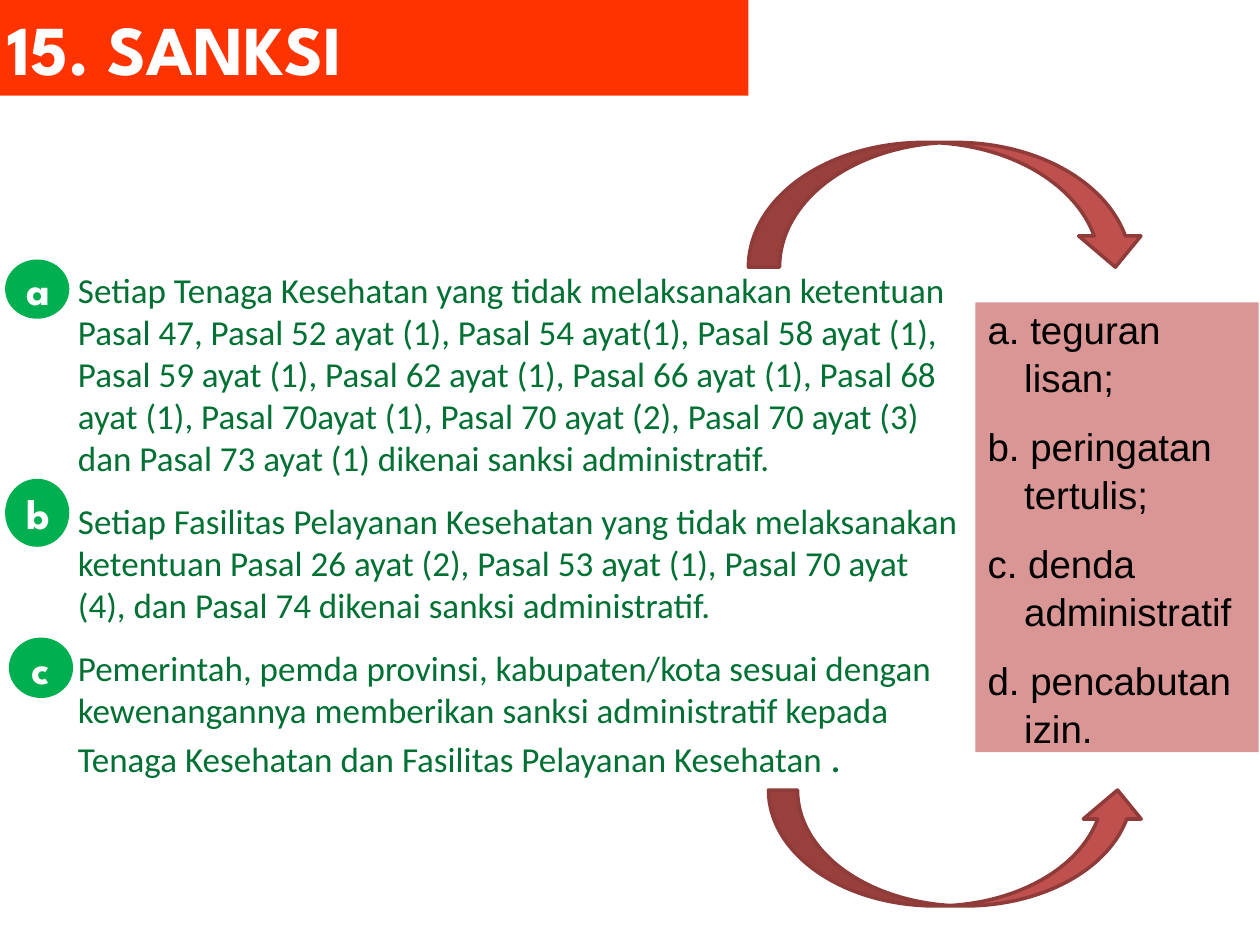
import pptx
import pptx.dml.color
import pptx.enum.shapes
import pptx.enum.text
import pptx.util

Inches = pptx.util.Inches
Pt = pptx.util.Pt
RGBColor = pptx.dml.color.RGBColor
Shape = pptx.enum.shapes.MSO_SHAPE
Align = pptx.enum.text.PP_ALIGN
Anchor = pptx.enum.text.MSO_ANCHOR

ORANGE = RGBColor(0xFF, 0x33, 0x00)
GREEN = RGBColor(0x00, 0xB0, 0x50)
DARK_GREEN = RGBColor(0x00, 0x70, 0x33)
PINK = RGBColor(0xD9, 0x96, 0x94)
RED = RGBColor(0xC0, 0x50, 0x4D)
DARK_RED = RGBColor(0x8E, 0x3B, 0x39)
WHITE = RGBColor(0xFF, 0xFF, 0xFF)
BLACK = RGBColor(0x00, 0x00, 0x00)

HEADING_FONT = "League Spartan"

ARTICLES = [
    [("Setiap Tenaga Kesehatan yang tidak melaksanakan ketentuan Pasal 47, "
      "Pasal 52 ayat (1), Pasal 54 ayat(1), Pasal 58 ayat (1), Pasal 59 ayat (1), "
      "Pasal 62 ayat (1), Pasal 66 ayat (1), Pasal 68 ayat (1), Pasal 70ayat (1), "
      "Pasal 70 ayat (2), Pasal 70 ayat (3) dan Pasal 73 ayat (1) dikenai sanksi "
      "administratif.", 20)],
    [("Setiap Fasilitas Pelayanan Kesehatan yang tidak melaksanakan ketentuan "
      "Pasal 26 ayat (2), Pasal 53 ayat (1), Pasal 70 ayat (4), dan Pasal 74 "
      "dikenai sanksi administratif.", 20)],
    [("Pemerintah, pemda provinsi, kabupaten/kota sesuai dengan kewenangannya "
      "memberikan sanksi administratif kepada Tenaga Kesehatan dan Fasilitas "
      "Pelayanan Kesehatan ", 20), (".", 24)],
]
SANCTIONS = ["a. teguran lisan;", "b. peringatan tertulis;",
             "c. denda administratif", "d. pencabutan izin."]
BADGES = [("a", 0.04, 2.06, 0.47), ("b", 0.04, 3.8, 0.54), ("c", 0.07, 5.06, 0.48)]
ARROWS = [(Shape.CURVED_DOWN_ARROW, 5.94, 1.13, 3.16, 0.99),
          (Shape.CURVED_UP_ARROW, 6.1, 6.27, 3, 0.92)]


def add_run(paragraph, text, size, font, color, bold=False):
    run = paragraph.add_run()
    run.text = text
    run.font.size = Pt(size)
    run.font.name = font
    run.font.color.rgb = color
    run.font.bold = bold


def add_filled_shape(slide, kind, left, top, width, height, fill):
    shape = slide.shapes.add_shape(
        kind, Inches(left), Inches(top), Inches(width), Inches(height))
    shape.shadow.inherit = False
    shape.fill.solid()
    shape.fill.fore_color.rgb = fill
    shape.line.fill.background()
    return shape


def add_list(frame, items, font, color, margin, indent, line_spacing=1.0):
    """Write one paragraph per item; an item is a list of (text, size) runs."""
    frame.word_wrap = True
    frame.vertical_anchor = Anchor.MIDDLE
    for index, runs in enumerate(items):
        paragraph = frame.add_paragraph() if index else frame.paragraphs[0]
        paragraph.alignment = Align.LEFT
        paragraph.space_after = Pt(12)
        paragraph.line_spacing = line_spacing
        properties = paragraph._p.get_or_add_pPr()
        properties.set("marL", str(Inches(margin)))
        properties.set("indent", str(Inches(indent)))
        for text, size in runs:
            add_run(paragraph, text, size, font, color)


def format_title(title):
    title.left, title.top = Inches(-0.04), Inches(0)
    title.width, title.height = Inches(5.98), Inches(0.76)
    title.fill.solid()
    title.fill.fore_color.rgb = ORANGE
    frame = title.text_frame
    frame.auto_size = pptx.enum.text.MSO_AUTO_SIZE.NONE
    frame.vertical_anchor = Anchor.MIDDLE
    paragraph = frame.paragraphs[0]
    paragraph.alignment = Align.LEFT
    add_run(paragraph, "15. SANKSI", 40, HEADING_FONT, WHITE, bold=True)


def add_articles(slide):
    box = slide.shapes.add_textbox(
        Inches(0.04), Inches(2.06), Inches(7.68), Inches(4.21))
    add_list(box.text_frame, ARTICLES, "Calibri", DARK_GREEN, 0.48, 0)


def add_sanctions(slide):
    box = add_filled_shape(slide, Shape.RECTANGLE, 7.74, 2.4, 2.25, 3.57, PINK)
    items = [[(text, 22)] for text in SANCTIONS]
    add_list(box.text_frame, items, "Arial", BLACK, 0.29, -0.29, 1.04)


def add_badge(slide, letter, left, top, height):
    badge = add_filled_shape(slide, Shape.OVAL, left, top, 0.51, height, GREEN)
    badge.text_frame.vertical_anchor = Anchor.MIDDLE
    paragraph = badge.text_frame.paragraphs[0]
    paragraph.alignment = Align.CENTER
    add_run(paragraph, letter, 24, HEADING_FONT, WHITE, bold=True)


def add_curved_arrow(slide, kind, left, top, width, height):
    arrow = add_filled_shape(slide, kind, left, top, width, height, RED)
    arrow.line.color.rgb = DARK_RED
    arrow.line.width = Pt(2)


def main():
    presentation = pptx.Presentation()
    presentation.slide_width = Inches(10)
    presentation.slide_height = Inches(7.5)
    slide = presentation.slides.add_slide(presentation.slide_layouts[5])
    format_title(slide.shapes.title)
    add_articles(slide)
    add_sanctions(slide)
    for badge in BADGES:
        add_badge(slide, *badge)
    for arrow in ARROWS:
        add_curved_arrow(slide, *arrow)
    presentation.save("out.pptx")


if __name__ == "__main__":
    main()
